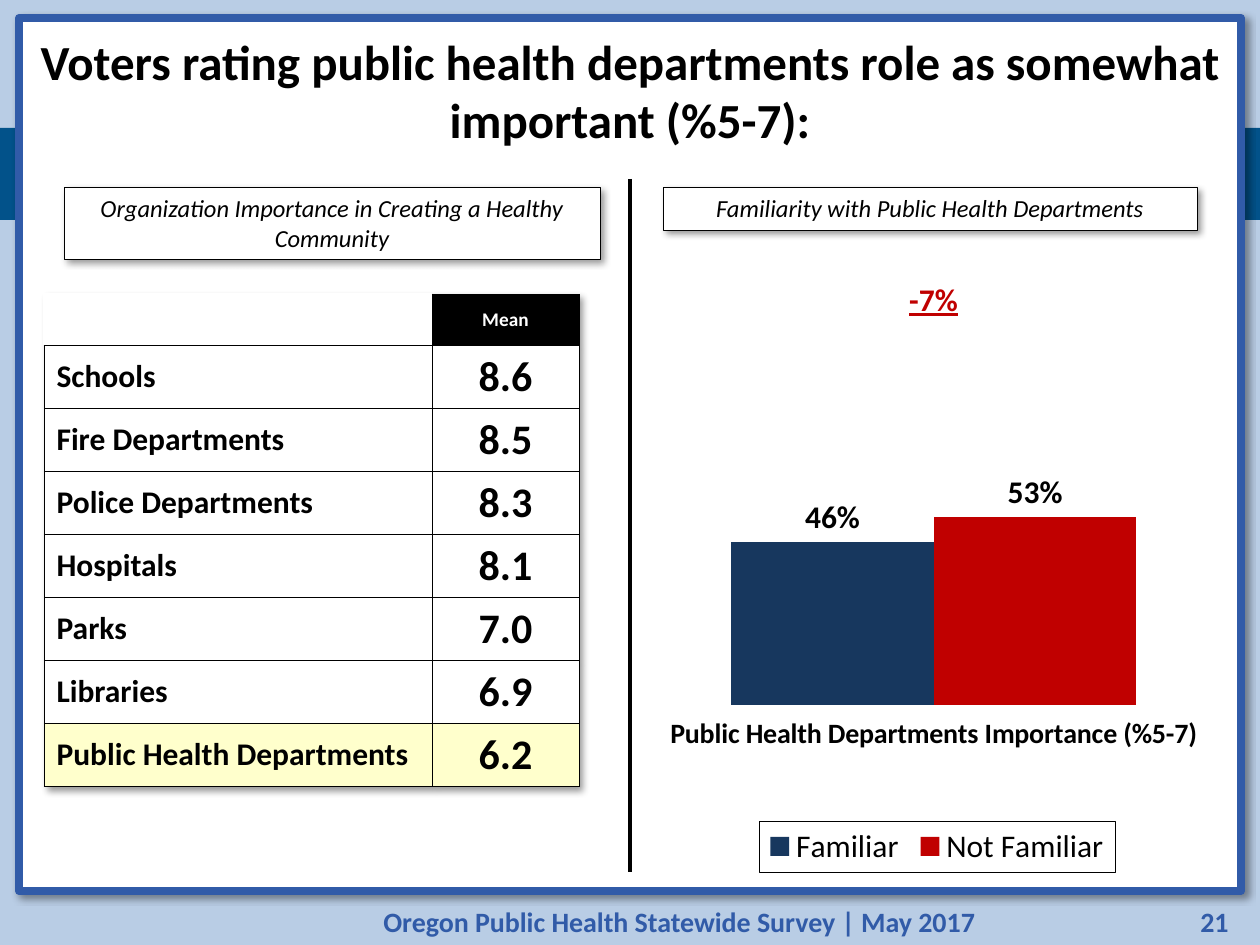
from lxml import etree
from pptx import Presentation
from pptx.chart.data import CategoryChartData
from pptx.dml.color import RGBColor
from pptx.enum.chart import XL_CHART_TYPE, XL_LABEL_POSITION, XL_LEGEND_POSITION, XL_TICK_MARK
from pptx.enum.shapes import MSO_CONNECTOR, MSO_SHAPE
from pptx.enum.text import MSO_ANCHOR, PP_ALIGN
from pptx.oxml import parse_xml
from pptx.oxml.ns import nsdecls, qn
from pptx.util import Pt

LEFT, CENTER, RIGHT = PP_ALIGN.LEFT, PP_ALIGN.CENTER, PP_ALIGN.RIGHT
TOP, MIDDLE = MSO_ANCHOR.TOP, MSO_ANCHOR.MIDDLE
RECTANGLE, STRAIGHT = MSO_SHAPE.RECTANGLE, MSO_CONNECTOR.STRAIGHT
COLUMNS, OUTSIDE_END = XL_CHART_TYPE.COLUMN_CLUSTERED, XL_LABEL_POSITION.OUTSIDE_END
BOTTOM, TICK_OUT = XL_LEGEND_POSITION.BOTTOM, XL_TICK_MARK.OUTSIDE

FONT = "Calibri"
COLORS = {
    "backdrop": "B9CDE5", "band": "02528A", "frame": "315BA8", "white": "FFFFFF",
    "black": "000000", "highlight": "FFFFCC", "navy": "17375E", "red": "C00000",
}
EMU_PER_PX = 914400 / 126


def px(length):
    return round(length * EMU_PER_PX)


def rgb(name):
    return RGBColor.from_string(COLORS[name])


def add_shadow(properties):
    effects = properties.find(qn("a:effectLst"))
    if effects is None:
        effects = etree.SubElement(properties, qn("a:effectLst"))
    effects.append(parse_xml(
        f'<a:outerShdw {nsdecls("a")} blurRad="50800" dist="38100" dir="2700000" algn="tl" rotWithShape="0">'
        f'<a:srgbClr val="{COLORS["black"]}"><a:alpha val="40000"/></a:srgbClr></a:outerShdw>'))


def place_in_chart(parent, index, x, y, w, h, target=""):
    for old in parent.findall(qn("c:layout")):
        parent.remove(old)
    parent.insert(index, parse_xml(
        f'<c:layout {nsdecls("c")}><c:manualLayout>{target}'
        f'<c:xMode val="edge"/><c:yMode val="edge"/><c:x val="{x}"/><c:y val="{y}"/>'
        f'<c:w val="{w}"/><c:h val="{h}"/></c:manualLayout></c:layout>'))


class SurveySlide:
    def __init__(self, deck):
        self.slide = deck.slides.add_slide(deck.slide_layouts[5])
        self.shapes = self.slide.shapes
        fill = self.slide.background.fill
        fill.solid()
        fill.fore_color.rgb = rgb("backdrop")

    def set_text(self, frame, text, size, color="black", align=CENTER, bold=None, italic=None, underline=None):
        paragraph = frame.paragraphs[0]
        paragraph.text = text
        paragraph.alignment = align
        font = paragraph.font
        font.name, font.size, font.color.rgb = FONT, Pt(size), rgb(color)
        font.bold, font.italic, font.underline = bold, italic, underline

    def title(self, text, box):
        title = self.shapes.title
        title.left, title.top, title.width, title.height = map(px, box)
        frame = title.text_frame
        frame.word_wrap, frame.vertical_anchor = True, MIDDLE
        frame.margin_left = frame.margin_right = px(5)
        self.set_text(frame, text, 28, bold=True)
        self.shapes._spTree.append(title._element)

    def text(self, text, box, align):
        frame = self.shapes.add_textbox(*map(px, box)).text_frame
        frame.word_wrap, frame.vertical_anchor = True, MIDDLE
        self.set_text(frame, text, 16, "frame", align, bold=True)

    def panel(self, box, fill, line=None, width=0.25, shadow=False):
        panel = self.shapes.add_shape(RECTANGLE, *map(px, box))
        panel.shadow.inherit = False
        panel.fill.solid()
        panel.fill.fore_color.rgb = rgb(fill)
        if line:
            panel.line.color.rgb = rgb(line)
            panel.line.width = Pt(width)
        else:
            panel.line.fill.background()
        if shadow:
            add_shadow(panel._element.spPr)
        return panel

    def caption(self, text, box):
        frame = self.panel(box, "white", "black", shadow=True).text_frame
        frame.word_wrap, frame.vertical_anchor = True, TOP
        self.set_text(frame, text, 14, italic=True)

    def divider(self, x, top, bottom):
        line = self.shapes.add_connector(STRAIGHT, px(x), px(top), px(x), px(bottom))
        line.line.color.rgb = rgb("black")
        line.line.width = Pt(2.25)
        etree.SubElement(line._element.spPr, qn("a:effectLst"))

    def table(self, left, top, widths, heights):
        box = map(px, (left, top, sum(widths), sum(heights)))
        table = self.shapes.add_table(len(heights), len(widths), *box).table
        table.first_row = table.horz_banding = False
        for column, width in zip(table.columns, widths):
            column.width = px(width)
        for row, height in zip(table.rows, heights):
            row.height = px(height)
        return table

    def cell(self, cell, fill, sides="LRTB"):
        properties = cell._tc.get_or_add_tcPr()
        for side in sides:
            properties.append(parse_xml(
                f'<a:ln{side} {nsdecls("a")} w="3175"><a:solidFill>'
                f'<a:srgbClr val="{COLORS["black"]}"/></a:solidFill></a:ln{side}>'))
        cell.fill.solid()
        cell.fill.fore_color.rgb = rgb(fill)
        cell.vertical_anchor = MIDDLE

    def ratings(self, left, top, ratings, highlighted):
        table = self.table(left, top, (388, 147), [51] + [63] * len(ratings))
        add_shadow(table._tbl.tblPr)
        effects = table._tbl.tblPr.find(qn("a:effectLst"))
        table._tbl.tblPr.insert(0, effects)
        self.cell(table.cell(0, 0), "white", "RB")
        self.cell(table.cell(0, 1), "black")
        self.set_text(table.cell(0, 1).text_frame, "Mean", 11, "white", bold=True)
        for row, (organization, mean) in enumerate(ratings, 1):
            fill = "highlight" if organization == highlighted else "white"
            for column, (text, size, align) in enumerate(((organization, 18, LEFT), (mean, 24, CENTER))):
                cell = table.cell(row, column)
                self.cell(cell, fill)
                self.set_text(cell.text_frame, text, size, align=align, bold=True)

    def difference(self, text, left, top):
        cell = self.table(left, top, [501], [52]).cell(0, 0)
        cell.fill.background()
        self.set_text(cell.text_frame, text, 18, "red", bold=True, underline=True)

    def chart(self, box, category, series):
        data = CategoryChartData(number_format="0%")
        data.categories = [category]
        for name, value, _ in series:
            data.add_series(name, [value])
        chart = self.shapes.add_chart(COLUMNS, *map(px, box), data).chart
        chart.has_title = False
        chart.font.name, chart.font.size, chart.font.color.rgb = FONT, Pt(18), rgb("black")

        plot = chart.plots[0]
        plot.gap_width, plot.overlap, plot.vary_by_categories = 100, 0, False
        for bars, (_, _, color) in zip(plot.series, series):
            bars.format.fill.solid()
            bars.format.fill.fore_color.rgb = rgb(color)
            labels = bars.data_labels
            labels.show_value, labels.position = True, OUTSIDE_END
            labels.number_format, labels.number_format_is_linked = "0%", False
            labels.font.bold, labels.font.size = True, Pt(18)

        chart.value_axis.minimum_scale, chart.value_axis.maximum_scale = 0, 1
        chart.value_axis.has_major_gridlines = chart.value_axis.visible = False
        axis = chart.category_axis
        axis.major_tick_mark = TICK_OUT
        axis.format.line.fill.background()
        axis.tick_labels.font.size, axis.tick_labels.font.bold = Pt(16), True
        place_in_chart(chart._chartSpace.chart.plotArea, 0, 0, 0.28, 0.99, 0.49,
                       '<c:layoutTarget val="inner"/>')

        chart.has_legend = True
        legend = chart.legend
        legend.position, legend.include_in_layout = BOTTOM, False
        legend.font.size = Pt(18)
        place_in_chart(legend._element, 1, 0.21, 0.93, 0.58, 0.07)
        legend._element.find(qn("c:overlay")).addnext(parse_xml(
            f'<c:spPr {nsdecls("c", "a")}><a:ln w="3175"><a:solidFill>'
            f'<a:srgbClr val="{COLORS["black"]}"/></a:solidFill></a:ln></c:spPr>'))


def main():
    deck = Presentation()
    deck.slide_width, deck.slide_height = px(1260), px(945)
    survey = SurveySlide(deck)
    survey.panel((0, 128, 1260, 92), "band")
    survey.text("Oregon Public Health Statewide Survey | May 2017", (204, 898, 951, 46), CENTER)
    survey.text("21", (1155, 898, 86, 46), RIGHT)
    survey.panel((19, 18, 1222, 873), "white", "frame", 4.5, shadow=True)
    survey.ratings(44, 294, (
        ("Schools", "8.6"), ("Fire Departments", "8.5"), ("Police Departments", "8.3"),
        ("Hospitals", "8.1"), ("Parks", "7.0"), ("Libraries", "6.9"),
        ("Public Health Departments", "6.2"),
    ), "Public Health Departments")
    survey.chart((630, 147, 614, 725), "Public Health Departments Importance (%5-7)",
                 (("Familiar", 0.46, "navy"), ("Not Familiar", 0.53, "red")))
    survey.caption("Organization Importance in Creating a Healthy Community", (64, 187, 536, 72))
    survey.divider(630, 179, 872)
    survey.caption("Familiarity with Public Health Departments", (663, 187, 534, 43))
    survey.difference("-7%", 683, 275)
    survey.title("Voters rating public health departments role as somewhat important (%5-7):",
                 (19, 18, 1222, 144))
    deck.save("out.pptx")


if __name__ == "__main__":
    main()
